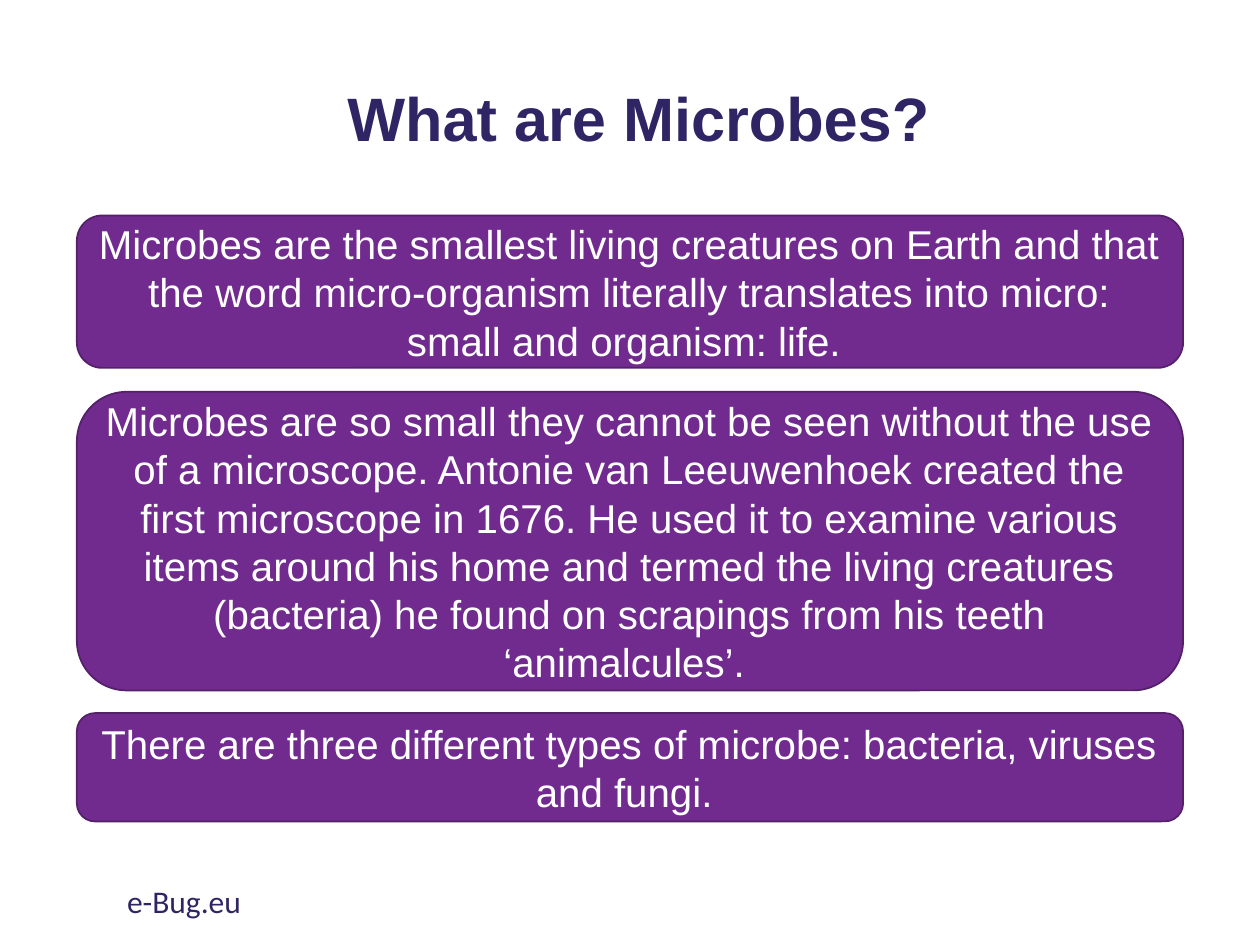
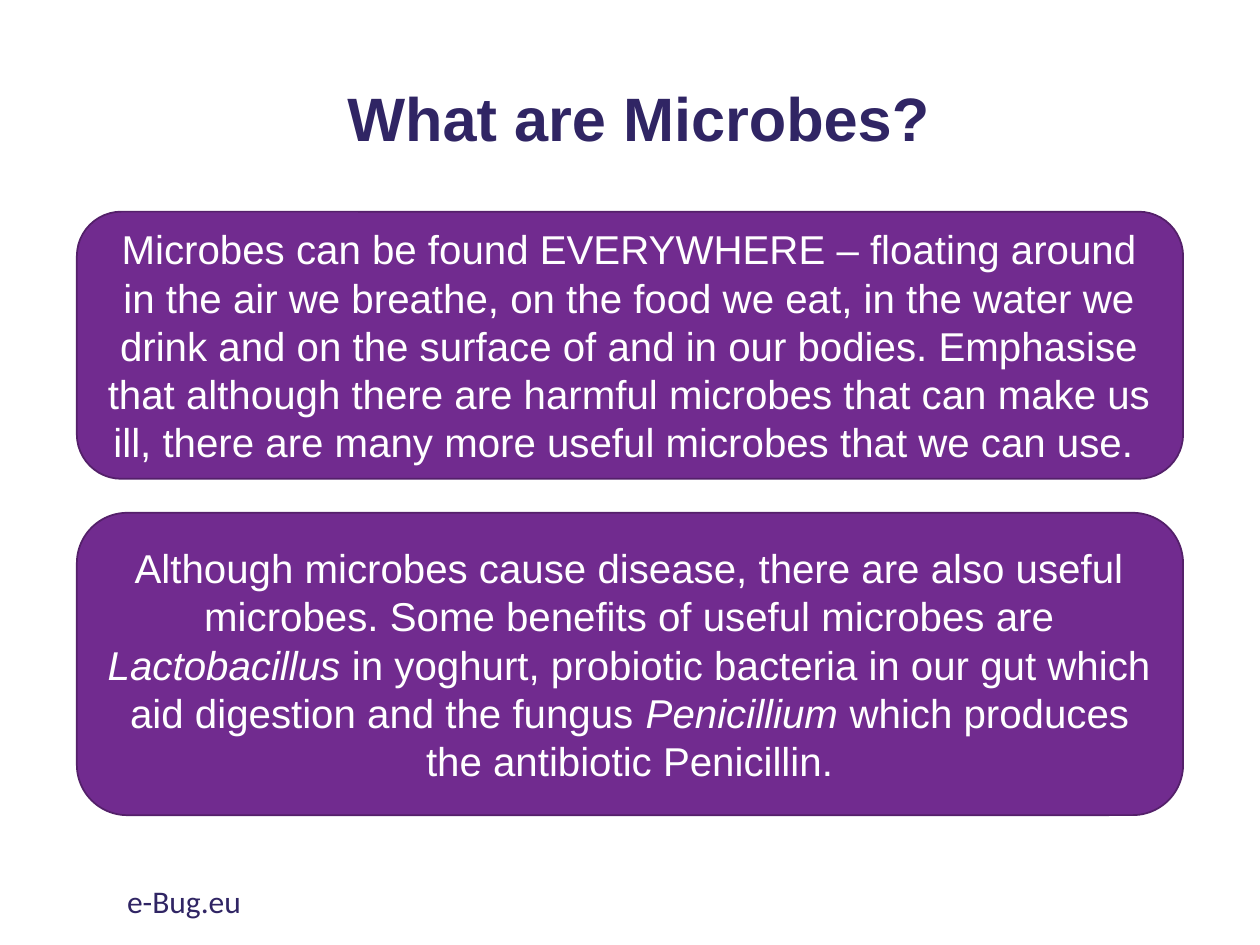
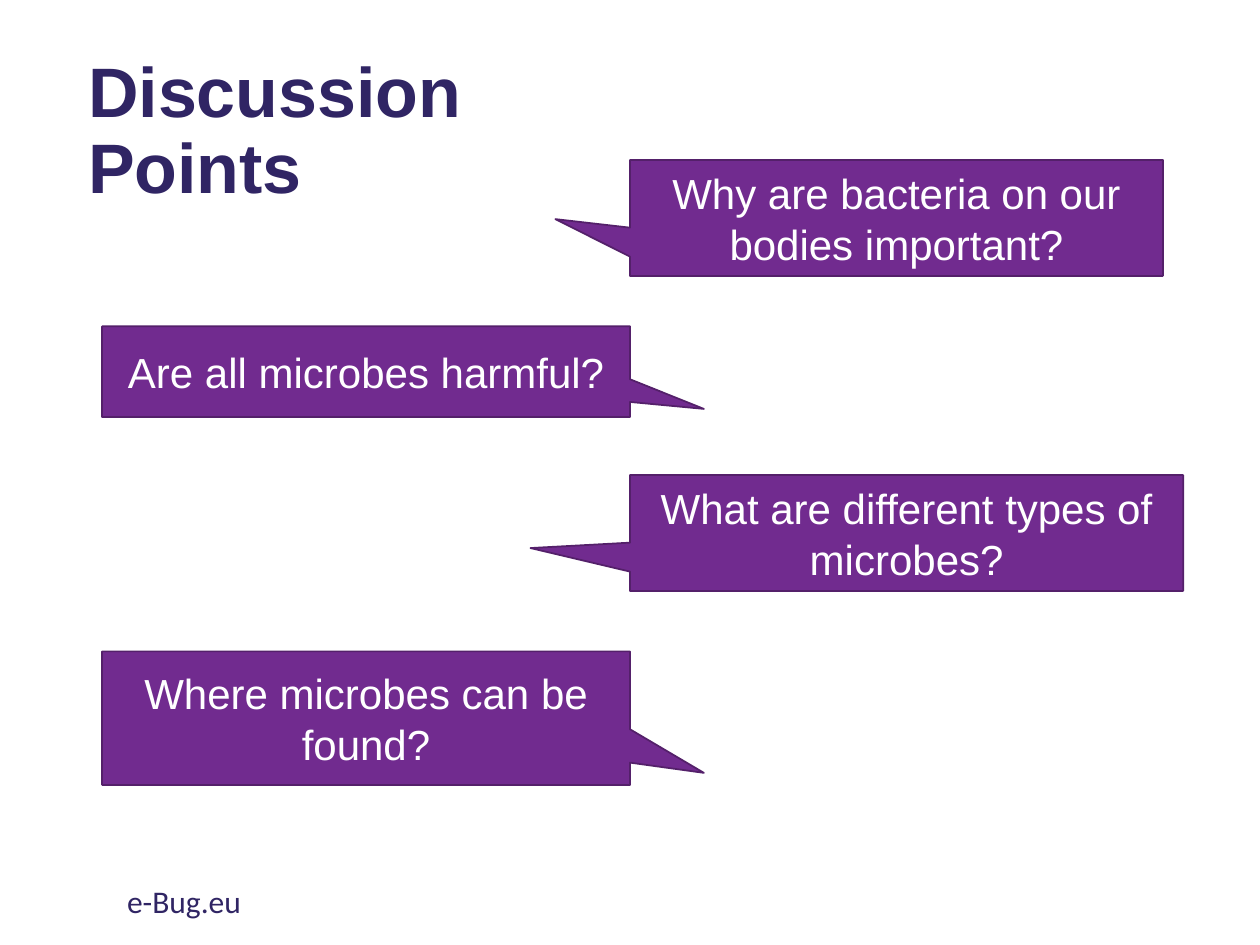
from pptx import Presentation
from pptx.dml.color import RGBColor
from pptx.enum import shapes, text
from pptx.util import Inches, Pt

PURPLE = RGBColor(0x71, 0x2B, 0x8F)
DARK_PURPLE = RGBColor(0x54, 0x20, 0x6A)
NAVY = RGBColor(0x30, 0x25, 0x64)
WHITE = RGBColor(0xFF, 0xFF, 0xFF)
CENTER = text.PP_ALIGN.CENTER
LEFT = text.PP_ALIGN.LEFT
MIDDLE = text.MSO_ANCHOR.MIDDLE

presentation = Presentation()
presentation.slide_width = Inches(10)
presentation.slide_height = Inches(7.5)


def add_slide(title_text, box, size, alignment):
    slide = presentation.slides.add_slide(presentation.slide_layouts[5])
    title = slide.shapes.title
    title.left, title.top, title.width, title.height = map(Inches, box)
    title.text_frame.text = title_text
    title.text_frame.vertical_anchor = MIDDLE
    title.text_frame.word_wrap = True
    paragraph = title.text_frame.paragraphs[0]
    paragraph.alignment = alignment
    paragraph.line_spacing = 0.9
    font = paragraph.runs[0].font
    font.name, font.size, font.bold = "Arial", Pt(size), True
    font.color.rgb = NAVY

    footer = slide.shapes.add_textbox(Inches(0.91), Inches(6.95), Inches(3.38), Inches(0.4))
    footer.text_frame.word_wrap = True
    footer.text_frame.text = "e-Bug.eu"
    font = footer.text_frame.paragraphs[0].runs[0].font
    font.name, font.size = "Calibri", Pt(18)
    font.color.rgb = NAVY
    return slide


def add_panel(slide, kind, box, parts, size):
    shape = slide.shapes.add_shape(kind, *map(Inches, box))
    shape.shadow.inherit = False
    shape.fill.solid()
    shape.fill.fore_color.rgb = PURPLE
    shape.line.color.rgb = DARK_PURPLE
    shape.line.width = Pt(1)
    shape.text_frame.word_wrap = True
    shape.text_frame.vertical_anchor = MIDDLE
    paragraph = shape.text_frame.paragraphs[0]
    paragraph.alignment = CENTER
    for index, part in enumerate(parts):
        run = paragraph.add_run()
        run.text = part
        run.font.name, run.font.size = "Arial", Pt(size)
        run.font.italic = index % 2 == 1
        run.font.color.rgb = WHITE
    return shape


fact_slides = [
    [
        (1.71, 1.21, ["Microbes are the smallest living creatures on Earth and that the word "
                      "micro-organism literally translates into micro: small and organism: life. "]),
        (3.11, 2.37, ["Microbes are so small they cannot be seen without the use of a microscope. "
                      "Antonie van Leeuwenhoek created the first microscope in 1676. He used it to "
                      "examine various items around his home and termed the living creatures "
                      "(bacteria) he found on scrapings from his teeth ‘animalcules’. "]),
        (5.66, 0.86, ["There are three different types of microbe: bacteria, viruses and fungi. "]),
    ],
    [
        (1.68, 2.12, ["Microbes can be found EVERYWHERE – floating around in the air we breathe, on "
                      "the food we eat, in the water we drink and on the surface of and in our "
                      "bodies. Emphasise that although there are harmful microbes that can make us "
                      "ill, there are many more useful microbes that we can use. "]),
        (4.07, 2.4, ["Although microbes cause disease, there are also useful microbes. Some benefits "
                     "of useful microbes are ",
                     "Lactobacillus",
                     " in yoghurt, probiotic bacteria in our gut which aid digestion and the fungus ",
                     "Penicillium",
                     " which produces the antibiotic Penicillin."]),
    ],
]
for facts in fact_slides:
    slide = add_slide("What are Microbes?", (0.76, 0.51, 8.62, 0.91), 35, CENTER)
    for top, height, parts in facts:
        add_panel(slide, shapes.MSO_SHAPE.ROUNDED_RECTANGLE, (0.61, top, 8.78, height), parts, 23)

slide = add_slide("Discussion Points", (0.6, 0.33, 3.43, 1.45), 40, LEFT)
questions = [
    ((5, 1.27, 4.23, 0.92), (-0.64, 0.01), "Why are bacteria on our bodies important?"),
    ((0.81, 2.59, 4.19, 0.72), (0.64, 0.41), "Are all microbes harmful?"),
    ((5, 3.77, 4.39, 0.92), (-0.68, 0.13), "What are different types of microbes?"),
    ((0.81, 5.17, 4.19, 1.06), (0.64, 0.41), "Where microbes can be found?"),
]
for box, pointer, question in questions:
    callout = add_panel(slide, shapes.MSO_SHAPE.RECTANGULAR_CALLOUT, box, [question], 24)
    callout.adjustments[0], callout.adjustments[1] = pointer

presentation.save("out.pptx")
